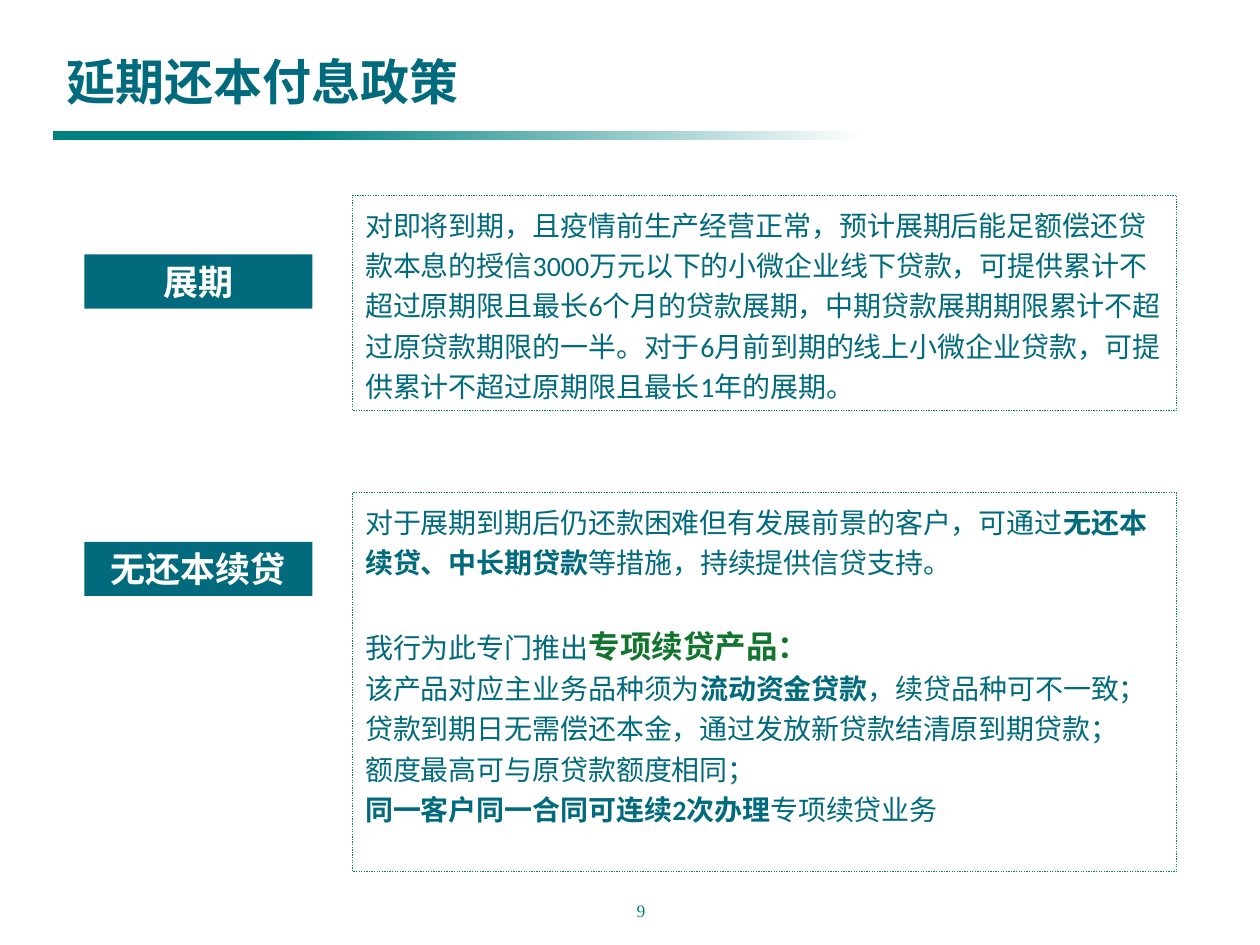
from copy import deepcopy
from dataclasses import dataclass

from pptx import Presentation
from pptx.dml.color import RGBColor
from pptx.enum.dml import MSO_LINE
from pptx.enum.shapes import MSO_SHAPE
from pptx.enum.text import MSO_ANCHOR, MSO_AUTO_SIZE, PP_ALIGN
from pptx.oxml.ns import qn
from pptx.util import Inches, Pt


@dataclass(frozen=True)
class Theme:
    font: str = "Calibri"
    number_font: str = "Times New Roman"
    ink: RGBColor = RGBColor(0x01, 0x6A, 0x7D)
    rule: RGBColor = RGBColor(0x00, 0x80, 0x80)
    border: RGBColor = RGBColor(0x02, 0x84, 0x58)
    product: RGBColor = RGBColor(0x13, 0x74, 0x2F)
    white: RGBColor = RGBColor(0xFF, 0xFF, 0xFF)
    title_size: Pt = Pt(28)
    label_size: Pt = Pt(20)
    product_size: Pt = Pt(18)
    body_size: Pt = Pt(16)
    number_size: Pt = Pt(10)
    section_gap: Pt = Pt(23)


THEME = Theme()
PLAIN, BOLD, PRODUCT = "plain", "bold", "product"

EXTENSION = [[
    (PLAIN, "对即将到期，且疫情前生产经营正常，预计展期后能足额偿还贷款本息的授信3000万元"
            "以下的小微企业线下贷款，可提供累计不超过原期限且最长6个月的贷款展期，中期贷款展期"
            "期限累计不超过原贷款期限的一半。对于6月前到期的线上小微企业贷款，可提供累计不超过"
            "原期限且最长1年的展期。"),
]]
RENEWAL = [
    [(PLAIN, "对于展期到期后仍还款困难但有发展前景的客户，可通过"),
     (BOLD, "无还本续贷、中长期贷款"),
     (PLAIN, "等措施，持续提供信贷支持。")],
    [(PLAIN, "我行为此专门推出"), (PRODUCT, "专项续贷产品：")],
    [(PLAIN, "该产品对应主业务品种须为"), (BOLD, "流动资金贷款"),
     (PLAIN, "，续贷品种可不一致；")],
    [(PLAIN, "贷款到期日无需偿还本金，通过发放新贷款结清原到期贷款；")],
    [(PLAIN, "额度最高可与原贷款额度相同；")],
    [(BOLD, "同一客户同一合同可连续2次办理"), (PLAIN, "专项续贷业务")],
]
# label, label top, body top, body height, paragraphs
SECTIONS = [
    ("展期", 2.02, 1.55, 1.71, EXTENSION),
    ("无还本续贷", 4.3, 3.91, 3.01, RENEWAL),
]


def set_font(font, size, color, bold=False, name=THEME.font):
    font.name, font.size, font.bold = name, size, bold
    font.color.rgb = color


def add_rectangle(page, left, top, width, height):
    box = page.shapes.add_shape(MSO_SHAPE.RECTANGLE, Inches(left), Inches(top),
                                Inches(width), Inches(height))
    box.shadow.inherit = False
    box.line.fill.background()
    return box


def add_title_rule(page):
    """Bar that holds its colour for 30 % and then fades to white."""
    bar = add_rectangle(page, 0.42, 1.04, 6.44, 0.07)
    bar.fill.gradient()
    bar.fill.gradient_angle = 0
    stops = bar._element.spPr.find(".//" + qn("a:gsLst"))
    stops.insert(1, deepcopy(stops[0]))
    colors = [(0, THEME.rule), (0.3, THEME.rule), (1, THEME.white)]
    for stop, (position, color) in zip(bar.fill.gradient_stops, colors):
        stop.position = position
        stop.color.rgb = color


def set_title(page, text):
    title = page.shapes.title
    title.left, title.top = Inches(0.43), Inches(0.36)
    title.width, title.height = Inches(6.14), Inches(0.57)
    frame = title.text_frame
    frame.text = text
    frame.auto_size = MSO_AUTO_SIZE.NONE
    frame.vertical_anchor = MSO_ANCHOR.MIDDLE
    para = frame.paragraphs[0]
    para.alignment = PP_ALIGN.LEFT
    set_font(para.font, THEME.title_size, THEME.ink, bold=True)


def add_label(page, top, text):
    label = add_rectangle(page, 0.67, top, 1.81, 0.43)
    label.fill.solid()
    label.fill.fore_color.rgb = THEME.ink
    frame = label.text_frame
    frame.text = text
    frame.vertical_anchor = MSO_ANCHOR.MIDDLE
    para = frame.paragraphs[0]
    para.alignment = PP_ALIGN.CENTER
    set_font(para.font, THEME.label_size, THEME.white, bold=True)


def add_body(page, top, height, paragraphs):
    """Dotted box; a paragraph that names the product opens a new section."""
    box = add_rectangle(page, 2.8, top, 6.54, height)
    box.fill.background()
    box.line.color.rgb = THEME.border
    box.line.width = Pt(0.75)
    box.line.dash_style = MSO_LINE.ROUND_DOT
    frame = box.text_frame
    frame.word_wrap = True
    frame.vertical_anchor = MSO_ANCHOR.TOP
    for index, spans in enumerate(paragraphs):
        para = frame.add_paragraph() if index else frame.paragraphs[0]
        para.alignment = PP_ALIGN.LEFT
        para.line_spacing = 1.2
        set_font(para.font, THEME.body_size, THEME.ink)
        for style, text in spans:
            span = para.add_run()
            span.text = text
            if style == BOLD:
                span.font.bold = True
            elif style == PRODUCT:
                para.space_before = THEME.section_gap
                set_font(span.font, THEME.product_size, THEME.product, bold=True)


def add_page_number(page, number):
    box = page.shapes.add_textbox(Inches(4.8), Inches(7.09), Inches(0.42), Inches(0.43))
    frame = box.text_frame
    frame.word_wrap = True
    frame.text = number
    para = frame.paragraphs[0]
    para.alignment = PP_ALIGN.RIGHT
    set_font(para.font, THEME.number_size, THEME.rule, name=THEME.number_font)


def main():
    deck = Presentation()
    deck.slide_width, deck.slide_height = Inches(10), Inches(7.5)
    page = deck.slides.add_slide(deck.slide_layouts.get_by_name("Title Only"))
    add_title_rule(page)
    add_page_number(page, "9")
    set_title(page, "延期还本付息政策")
    for label, label_top, body_top, height, paragraphs in SECTIONS:
        add_label(page, label_top, label)
        add_body(page, body_top, height, paragraphs)
    deck.save("out.pptx")


if __name__ == "__main__":
    main()
